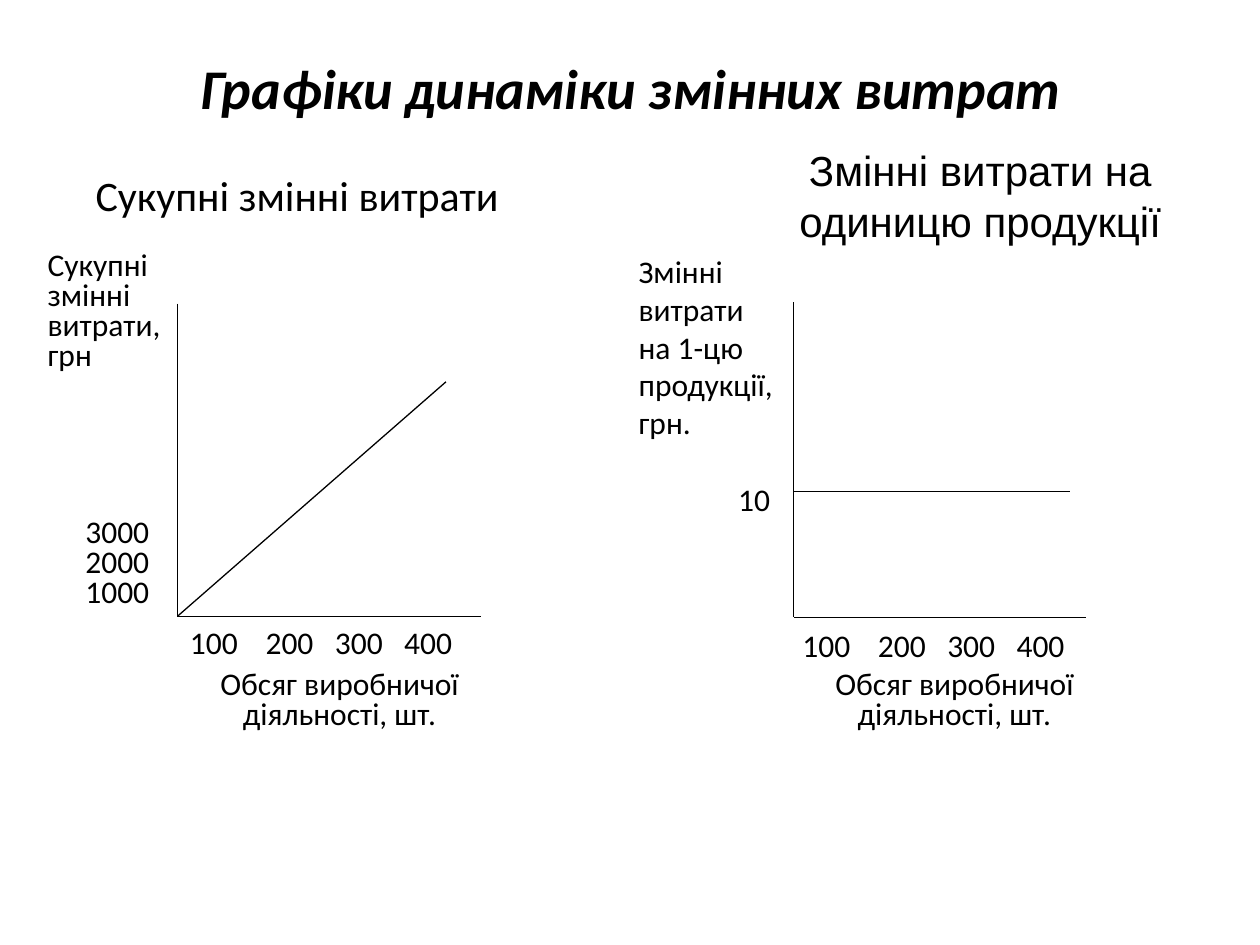
from dataclasses import dataclass

from lxml.etree import SubElement
from pptx import Presentation
from pptx.dml.color import RGBColor
from pptx.enum.shapes import MSO_CONNECTOR as Connector
from pptx.enum.text import MSO_ANCHOR as Anchor, PP_ALIGN as Align
from pptx.oxml.ns import qn
from pptx.util import Inches, Pt

WIDTH, HEIGHT = Inches(10), Inches(7.5)
COLUMNS, ROWS = 100, 75
BLACK = "000000"
TICKS = "100\t200\t300\t400"
TICK_STOPS = (6, 11.5, 17)
VOLUME = "Обсяг виробничої діяльності, шт."


@dataclass(frozen=True)
class Box:
    """An area in columns and rows of the slide grid."""
    left: float
    top: float
    width: float
    height: float


@dataclass(frozen=True)
class Label:
    lines: tuple[str, ...]
    box: Box
    size: int = 18
    font: str = "Calibri"
    align: Align = Align.LEFT
    anchor: Anchor = Anchor.TOP
    spacing: float = 1.0
    emphasis: bool = False
    wrap: bool = True
    tab_stops: tuple[float, ...] = ()


@dataclass(frozen=True)
class Graph:
    """Two axes meeting at the origin, and one cost line."""
    origin: tuple[float, float]
    axis_end: float
    axis_top: float
    cost_start: tuple[float, float]
    cost_end: tuple[float, float]
    labels: tuple[Label, ...]


def column(count: float) -> int:
    return round(WIDTH * count / COLUMNS)


def row(count: float) -> int:
    return round(HEIGHT * count / ROWS)


def colour(code: str) -> RGBColor:
    return RGBColor.from_string(code)


def add_tab_stops(paragraph, stops: tuple[float, ...]) -> None:
    tab_list = SubElement(paragraph._p.get_or_add_pPr(), qn("a:tabLst"))
    for stop in stops:
        SubElement(tab_list, qn("a:tab"), pos=str(column(stop)), algn="l")


def draw_label(slide, label: Label) -> None:
    box = label.box
    frame = slide.shapes.add_textbox(
        column(box.left), row(box.top), column(box.width), row(box.height)
    ).text_frame
    frame.word_wrap = label.wrap
    frame.vertical_anchor = label.anchor
    frame.text = "\n".join(label.lines)
    for paragraph in frame.paragraphs:
        paragraph.alignment = label.align
        paragraph.line_spacing = label.spacing
        font = paragraph.font
        font.name, font.size = label.font, Pt(label.size)
        font.bold = font.italic = label.emphasis
        font.color.rgb = colour(BLACK)
        if label.tab_stops:
            add_tab_stops(paragraph, label.tab_stops)


def draw_line(slide, start: tuple[float, float], end: tuple[float, float]) -> None:
    line = slide.shapes.add_connector(
        Connector.STRAIGHT, column(start[0]), row(start[1]), column(end[0]), row(end[1])
    )
    line.line.color.rgb = colour(BLACK)
    line.line.width = Pt(0.75)
    SubElement(line._element.spPr, qn("a:effectLst"))


def draw_graph(slide, graph: Graph) -> None:
    x, y = graph.origin
    draw_line(slide, graph.origin, (graph.axis_end, y))
    draw_line(slide, (x, graph.axis_top), graph.origin)
    draw_line(slide, graph.cost_start, graph.cost_end)
    for label in graph.labels:
        draw_label(slide, label)


def volume_label(left: float) -> Label:
    return Label((VOLUME,), Box(left, 52.8, 31.5, 8.9), align=Align.CENTER, spacing=0.8)


def tick_label(box: Box, spacing: float) -> Label:
    return Label((TICKS,), box, spacing=spacing, wrap=False, tab_stops=TICK_STOPS)


TITLE = Label(
    ("Графіки динаміки змінних витрат",), Box(3, 2.9, 94.2, 8.7),
    size=32, align=Align.CENTER, anchor=Anchor.MIDDLE, spacing=0.9, emphasis=True,
)

TOTAL_COSTS = Graph(
    origin=(14.1, 48.95), axis_end=38.2, axis_top=24.1,
    cost_start=(14.1, 48.9), cost_end=(35.4, 30.3),
    labels=(
        Label(("Сукупні змінні витрати",), Box(6.6, 13.7, 39.1, 4.2), size=24, spacing=0.8),
        Label(("Сукупні", "змінні", "витрати,", "грн"), Box(2.8, 19.5, 11.3, 10.7), spacing=0.8),
        Label(("3000", "2000", "1000"), Box(5.8, 40.7, 7.6, 8.3), spacing=0.8),
        tick_label(Box(14.1, 49.5, 24.3, 3.4), 0.8),
        volume_label(11.2),
    ),
)

UNIT_COSTS = Graph(
    origin=(63, 49), axis_end=86.2, axis_top=24,
    cost_start=(63, 39), cost_end=(84.9, 39),
    labels=(
        Label(("Змінні витрати на одиницю продукції",), Box(60, 11, 35.6, 12.6),
              size=24, font="Arial", align=Align.CENTER),
        Label(("Змінні", "витрати", "на 1-цю", "продукції,", "грн."), Box(49.7, 19.5, 13.2, 16.2)),
        tick_label(Box(62.7, 49.2, 23.7, 4), 1.0),
        volume_label(60),
        Label(("10",), Box(57.6, 37.6, 4.6, 4), wrap=False),
    ),
)


def main() -> None:
    deck = Presentation()
    deck.slide_width, deck.slide_height = WIDTH, HEIGHT
    slide = deck.slides.add_slide(deck.slide_layouts[6])
    draw_label(slide, TITLE)
    for graph in (TOTAL_COSTS, UNIT_COSTS):
        draw_graph(slide, graph)
    deck.save("out.pptx")


if __name__ == "__main__":
    main()
